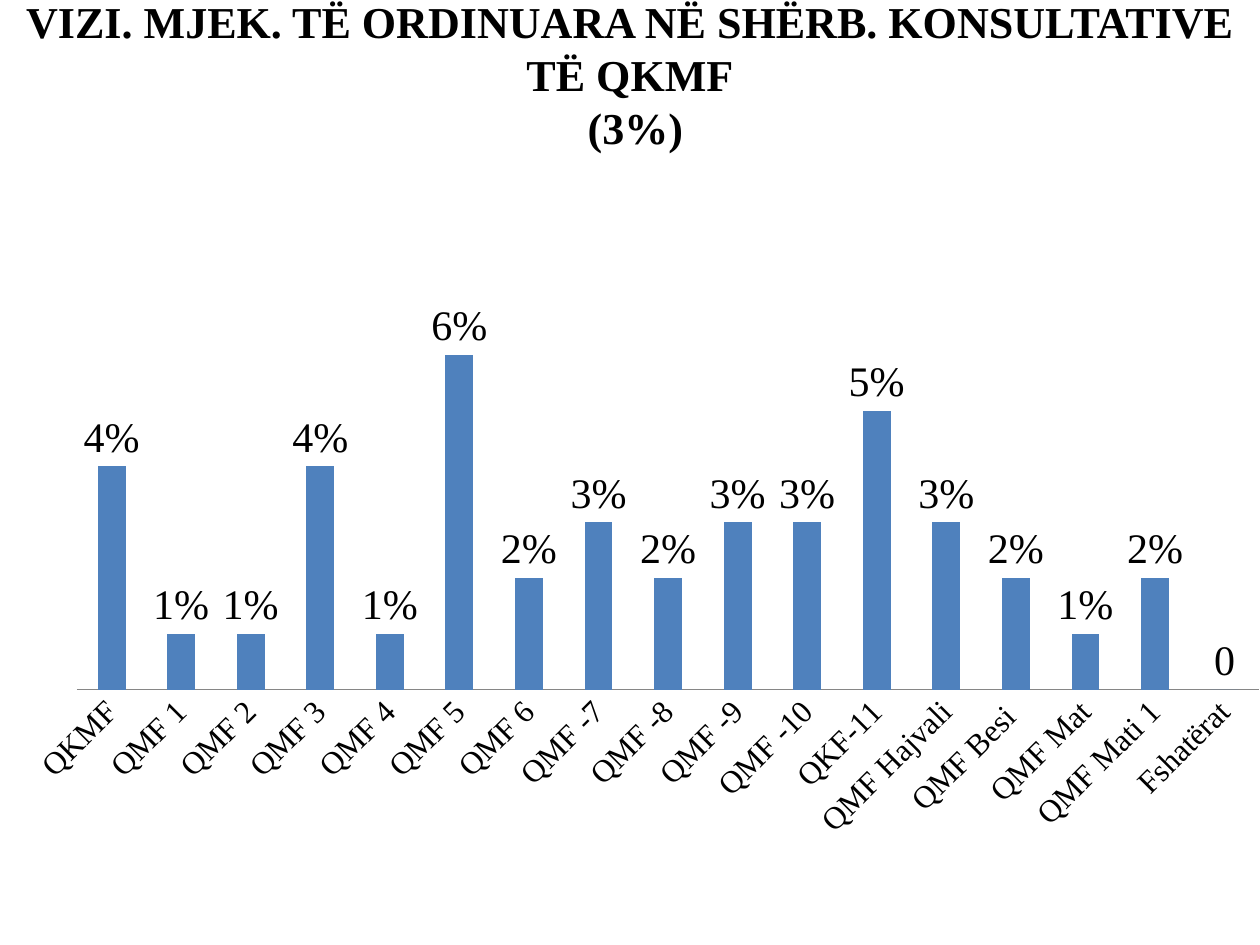
from lxml import etree
from pptx import Presentation
from pptx.chart.data import CategoryChartData
from pptx.dml.color import RGBColor
from pptx.enum import chart as ch, text
from pptx.util import Inches, Pt

# Content
HEADING = ["VIZI. MJEK. TË ORDINUARA NË SHËRB. KONSULTATIVE TË QKMF", " (3%)"]
VISITS = [
    ("QKMF", 4), ("QMF 1", 1), ("QMF 2", 1), ("QMF 3", 4), ("QMF 4", 1),
    ("QMF 5", 6), ("QMF 6", 2), ("QMF -7", 3), ("QMF -8", 2), ("QMF -9", 3),
    ("QMF -10", 3), ("QKF-11", 5), ("QMF Hajvali", 3), ("QMF Besi ", 2),
    ("QMF Mat", 1), ("QMF Mati 1", 2), ("Fshatërat", 0),
]
COLORS = {"text": "000000", "bar": "4F81BD", "axis": "868686"}
FONT = "Times New Roman"
PERCENT_OR_ZERO = '0"%";;0'
PLOT_AREA = {"x": 0.061, "y": 0.194, "w": 0.939, "h": 0.483}


def color(key):
    return RGBColor.from_string(COLORS[key])


def style(target, **values):
    for name, value in values.items():
        setattr(target, name, value)


def style_font(font, size, bold=False):
    style(font, name=FONT, size=Pt(size), bold=bold)
    font.color.rgb = color("text")


def place_plot(plot_area, fractions):
    """Fix the inner plot area as fractions of the chart frame."""
    ns = plot_area.nsmap["c"]
    for old in plot_area.findall(f"{{{ns}}}layout"):
        plot_area.remove(old)
    layout = etree.Element(f"{{{ns}}}layout")
    manual = etree.SubElement(layout, f"{{{ns}}}manualLayout")
    settings = {"layoutTarget": "inner", "xMode": "edge", "yMode": "edge", **fractions}
    for tag, value in settings.items():
        etree.SubElement(manual, f"{{{ns}}}{tag}").set("val", str(value))
    plot_area.insert(0, layout)


prs = Presentation()
style(prs, slide_width=Inches(10), slide_height=Inches(7.5))
slide = prs.slides.add_slide(prs.slide_layouts[6])

# Heading
heading = slide.shapes.add_textbox(0, 0, prs.slide_width, Inches(1.17)).text_frame
style(heading, word_wrap=True, vertical_anchor=text.MSO_ANCHOR.MIDDLE)
line = heading.paragraphs[0]
line.text = "\v".join(HEADING)
line.alignment = text.PP_ALIGN.CENTER
for run in line.runs:
    style_font(run.font, 25.2, bold=True)

# Column chart
visits = CategoryChartData(number_format="0")
visits.categories = [unit for unit, _ in VISITS]
visits.add_series("Series 1", [share for _, share in VISITS])
chart = slide.shapes.add_chart(
    ch.XL_CHART_TYPE.COLUMN_CLUSTERED, 0, Inches(1.75), Inches(10), Inches(5.5), visits
).chart
style(chart, has_legend=False, has_title=False)
style_font(chart.font, 10)
place_plot(chart.plots[0]._element.getparent(), PLOT_AREA)

# Bars and their labels
bars = chart.plots[0]
style(bars, gap_width=150, vary_by_categories=False, has_data_labels=True)
fill = bars.series[0].format.fill
fill.solid()
fill.fore_color.rgb = color("bar")
labels = bars.data_labels
style(labels, show_value=True, number_format=PERCENT_OR_ZERO,
      number_format_is_linked=False, position=ch.XL_LABEL_POSITION.OUTSIDE_END)
style_font(labels.font, 24)

# Axes
units = chart.category_axis
style(units, major_tick_mark=ch.XL_TICK_MARK.NONE, has_major_gridlines=False)
style_font(units.tick_labels.font, 18)
units.format.line.color.rgb = color("axis")
units.format.line.width = Pt(0.75)
units._element.txPr.bodyPr.set("rot", "-2700000")  # slanted 45 degrees
style(chart.value_axis, visible=False, has_major_gridlines=False,
      minimum_scale=0, maximum_scale=6)

prs.save("out.pptx")
